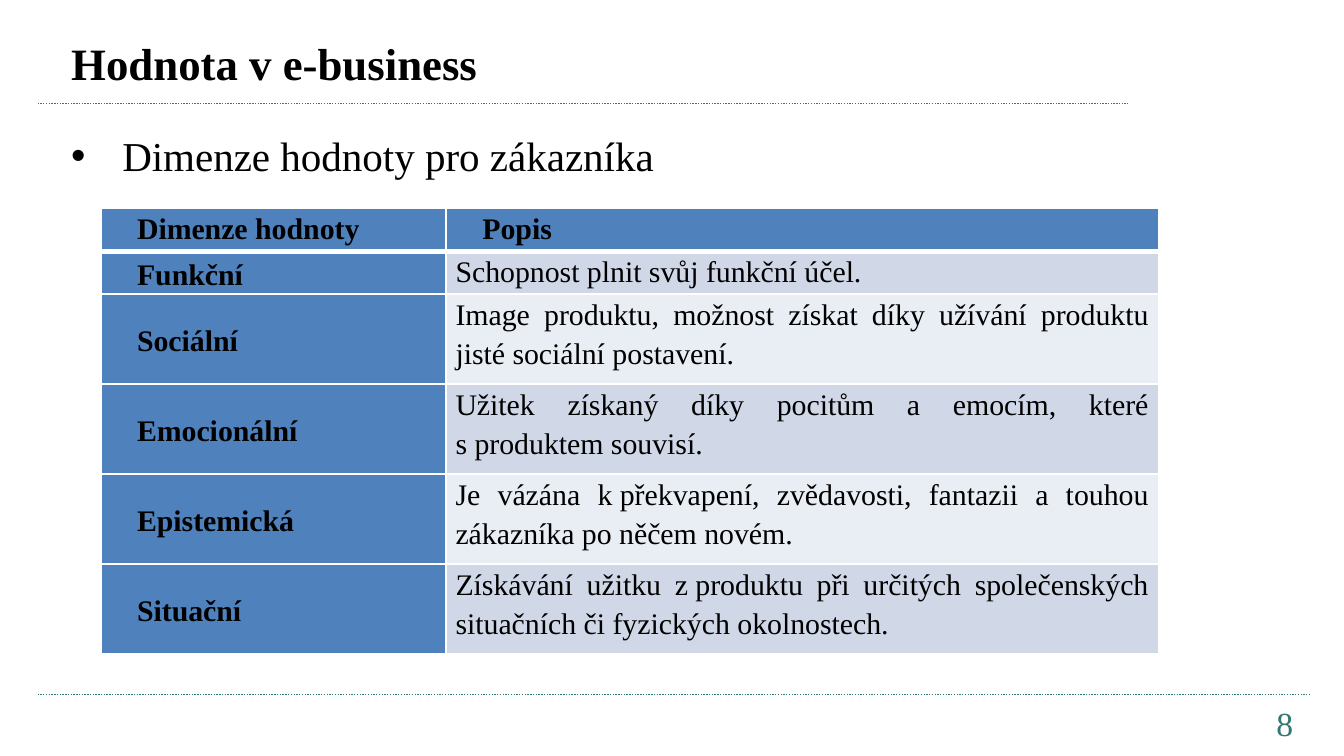
"""Build a slide with a table of customer value dimensions."""
from lxml import etree
from pptx import Presentation
from pptx.dml.color import RGBColor
from pptx.enum.dml import MSO_LINE
from pptx.enum.shapes import MSO_CONNECTOR
from pptx.enum.text import MSO_ANCHOR as ANCHOR, MSO_AUTO_SIZE, PP_ALIGN as ALIGN
from pptx.oxml import parse_xml
from pptx.oxml.ns import nsdecls, qn
from pptx.util import Inches, Pt

GREEN, BLUE, BLACK, WHITE = "307871", "4F81BD", "000000", "FFFFFF"
BANDS = ("D0D8E8", "E9EDF4")
NO_BREAK_SPACE = chr(160)
ROWS = [
    ("Dimenze hodnoty", "Popis"),
    ("Funkční", "Schopnost plnit svůj funkční účel."),
    ("Sociální", "Image produktu, možnost získat díky užívání produktu jisté sociální postavení."),
    ("Emocionální", "Užitek získaný díky pocitům a emocím, které s produktem souvisí."),
    ("Epistemická", "Je vázána k překvapení, zvědavosti, fantazii a touhou zákazníka po něčem novém."),
    ("Situační", "Získávání užitku z produktu při určitých společenských situačních či fyzických okolnostech."),
]


def rgb(color):
    return RGBColor.from_string(color)


def tie_prepositions(text):
    for word in "ksz":
        text = text.replace(f" {word} ", f" {word}{NO_BREAK_SPACE}")
    return text


def write(tf, text, size=16, color=BLACK, bold=False, align=ALIGN.LEFT,
          spacing=1, left=0, indent=0, bullet=None):
    p = tf.paragraphs[0]
    p.alignment, p.line_spacing, p.space_before = align, spacing, Pt(0)
    pPr = p._p.get_or_add_pPr()
    pPr.set("marL", str(Inches(left)))
    pPr.set("indent", str(Inches(indent)))
    if bullet:
        etree.SubElement(pPr, qn("a:buChar")).set("char", bullet)
    r = p.add_run()
    r.text = tie_prepositions(text)
    r.font.name, r.font.size, r.font.bold = "Times New Roman", Pt(size), bold
    r.font.color.rgb = rgb(color)


class Deck:
    def __init__(self, width):
        self.prs = Presentation()
        self.prs.slide_width = Inches(width)
        self.prs.slide_height = Inches(width) * 9 // 16
        self.s = self.prs.slides.add_slide(self.prs.slide_layouts[1])

    def line(self, x1, x2, y):
        c = self.s.shapes.add_connector(
            MSO_CONNECTOR.STRAIGHT, Inches(x1), Inches(y), Inches(x2), Inches(y))
        c.line.color.rgb, c.line.width = rgb(GREEN), Pt(0.75)
        c.line.dash_style = MSO_LINE.ROUND_DOT
        etree.SubElement(c._element.spPr, qn("a:effectLst"))

    def text(self, text, box, sp=None, anchor=ANCHOR.TOP, top=0.05, **style):
        at = [Inches(v) for v in box]
        sp = sp or self.s.shapes.add_textbox(*at)
        sp.left, sp.top, sp.width, sp.height = at
        tf = sp.text_frame
        tf.word_wrap, tf.auto_size = True, MSO_AUTO_SIZE.NONE
        tf.vertical_anchor, tf.margin_top = anchor, Inches(top)
        write(tf, text, **style)

    def cell(self, cell, text, fill, label, header, edges):
        cell.margin_left = cell.margin_right = Inches(0.07)
        cell.margin_top = cell.margin_bottom = 0
        cell.vertical_anchor = ANCHOR.MIDDLE if label and not header else ANCHOR.TOP
        named = label or header
        write(cell.text_frame, text, bold=named, align=ALIGN.JUSTIFY,
              spacing=1.15, indent=0.2 if named else 0)
        tcPr = cell._tc.get_or_add_tcPr()
        for side, width in edges.items():
            tcPr.append(parse_xml(
                f'<a:ln{side} {nsdecls("a")} w="{Pt(width)}"><a:solidFill>'
                f'<a:srgbClr val="{WHITE}"/></a:solidFill></a:ln{side}>'))
        cell.fill.solid()
        cell.fill.fore_color.rgb = rgb(fill)

    def table(self, rows, box, widths, heights):
        table = self.s.shapes.add_table(
            len(rows), len(widths), *[Inches(v) for v in box]).table
        for column, width in zip(table.columns, widths):
            column.width = Inches(width)
        for i, (texts, height) in enumerate(zip(rows, heights)):
            table.rows[i].height = Inches(height)
            edges = {"L": 1, "R": 1, "T": 3 if i == 1 else 1, "B": 3 if i == 0 else 1}
            for j, text in enumerate(texts):
                fill = BLUE if i == 0 or j == 0 else BANDS[(i - 1) % 2]
                self.cell(table.cell(i, j), text, fill, j == 0, i == 0, edges)


def main():
    deck = Deck(10)
    title, body = deck.s.placeholders
    deck.line(0.28, 8.39, 0.77)
    deck.line(0.28, 9.75, 5.17)
    deck.text("Hodnota v e-business", (0.43, 0.21, 6.69, 0.56), title,
              anchor=ANCHOR.MIDDLE, top=0, size=24, bold=True)
    deck.text("Dimenze hodnoty pro zákazníka", (0.43, 0.92, 9.06, 0.47), body,
              anchor=ANCHOR.BOTTOM, size=22, align=ALIGN.JUSTIFY,
              left=0.38, indent=-0.38, bullet="•")
    deck.text("8", (8.54, 5.17, 1.18, 0.3), top=0.06, size=18, color=GREEN,
              align=ALIGN.RIGHT)
    deck.table(ROWS, (0.75, 1.55, 7.87, 3.31), (2.57, 5.3), [0.32] * 2 + [0.67] * 4)
    deck.prs.save("out.pptx")


if __name__ == "__main__":
    main()
